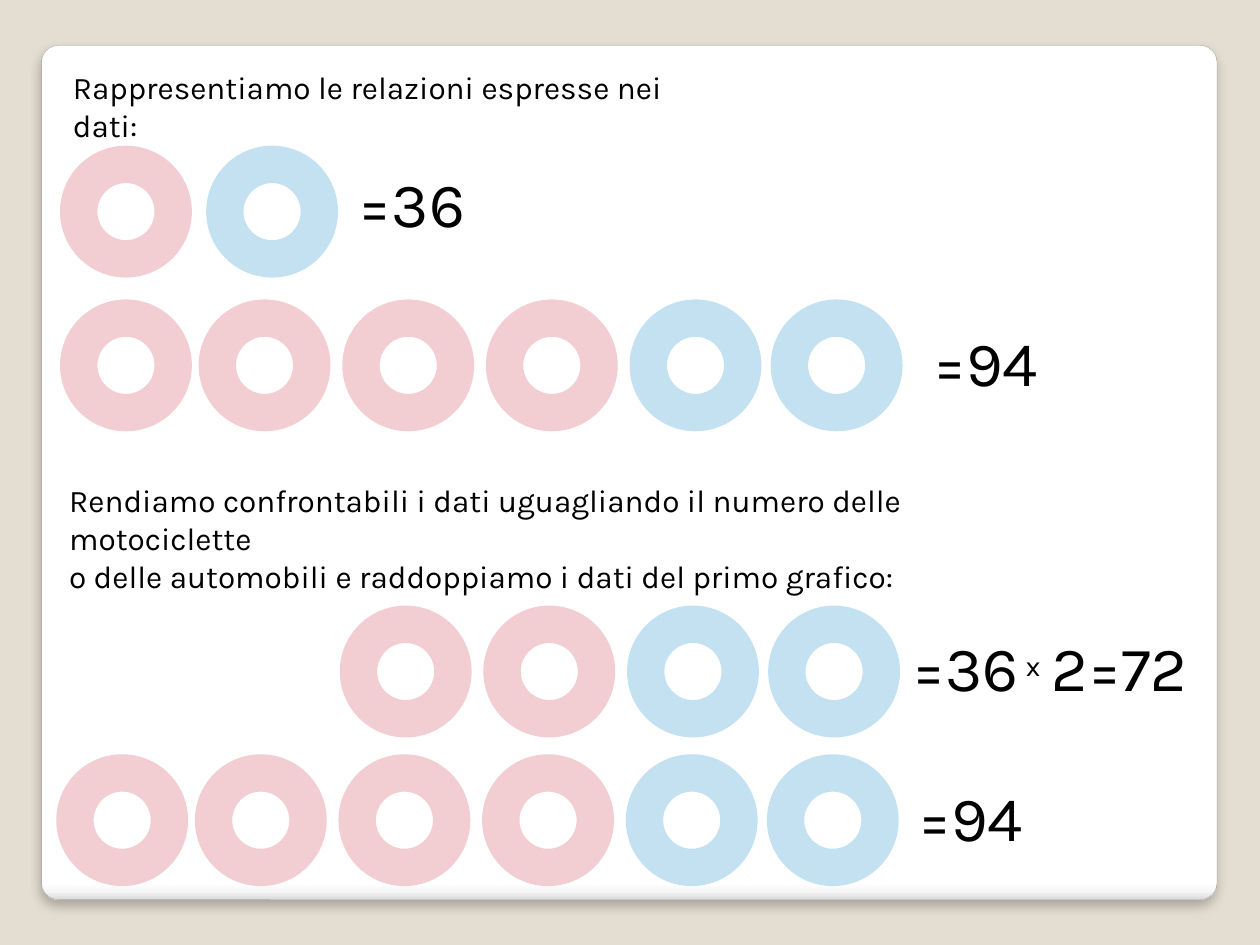
from lxml.etree import SubElement
from pptx import Presentation
from pptx.dml.color import RGBColor
from pptx.enum.shapes import MSO_SHAPE
from pptx.enum.text import MSO_ANCHOR, MSO_AUTO_SIZE
from pptx.oxml.ns import qn
from pptx.util import Inches, Pt

COLS, ROWS = 100, 75
WIDE, HIGH = Inches(10), Inches(7.5)
PINK, BLUE = "F2CED2", "C4E1F2"
RING = 10
STEPS = (0, 11, 22.4, 33.8, 45.2, 56.4)
CARS = (PINK,) * 4 + (BLUE,) * 2


def tint(color, code):
    color.rgb = RGBColor.from_string(code)


def place(left, top, width, height):
    return (int(WIDE * left / COLS), int(HIGH * top / ROWS),
            int(WIDE * width / COLS), int(HIGH * height / ROWS))


def add_card(slide, box):
    card = slide.shapes.add_shape(MSO_SHAPE.ROUNDED_RECTANGLE, *place(*box))
    card.adjustments[0] = 0.02
    card.shadow.inherit = False
    card.fill.gradient()
    card.fill.gradient_angle = 270
    tint(card.line.color, "A4A4A4")
    card.line.width = Pt(0.16)
    props = card.element.spPr
    stops = props.find(".//" + qn("a:gsLst"))
    stops.clear()
    for share, code in ((0, "FFFFFF"), (98, "FFFFFF"), (99, "F7F7F7"), (100, "DADADA")):
        stop = SubElement(stops, qn("a:gs"), pos=str(share * 1000))
        SubElement(stop, qn("a:srgbClr"), val=code)
    shade = SubElement(props.find(qn("a:effectLst")), qn("a:outerShdw"),
                       blurRad=str(Pt(6)), dist=str(Pt(4)), dir="5400000",
                       algn="t", rotWithShape="0")
    black = SubElement(shade, qn("a:srgbClr"), val="000000")
    SubElement(black, qn("a:alpha"), val="25000")


def add_rings(slide, left, top, steps, codes):
    for step, code in zip(steps, codes):
        ring = slide.shapes.add_shape(MSO_SHAPE.DONUT, *place(left + step, top, RING, RING))
        ring.shadow.inherit = False
        ring.fill.solid()
        tint(ring.fill.fore_color, code)
        tint(ring.line.color, code)
        ring.line.width = Pt(3.35)


def add_run(para, text, size):
    run = para.add_run()
    run.text = text
    run.font.name = "Karla"
    run.font.size = Pt(size)
    tint(run.font.color, "000000")
    return run


def add_text(slide, box, lines, size):
    frame = slide.shapes.add_textbox(*place(*box)).text_frame
    frame.word_wrap = True
    frame.auto_size = MSO_AUTO_SIZE.SHAPE_TO_FIT_TEXT
    for spot, line in enumerate(lines):
        para = frame.add_paragraph() if spot else frame.paragraphs[0]
        add_run(para, line, size)
    return frame


def add_double(slide, box):
    frame = add_text(slide, box, ["=36"], 36)
    frame.vertical_anchor = MSO_ANCHOR.MIDDLE
    para = frame.paragraphs[0]
    para.space_after = Pt(36)
    add_run(para, " ", 18)
    times = add_run(para, "x", 28).font._element
    times.set("baseline", "30000")
    times.set("spc", "640")
    add_run(para, "2=72", 36)


def add_given(slide, left, top):
    add_text(slide, (left, top, 53.1, 4),
             ["Rappresentiamo le relazioni espresse nei dati:"], 18)
    add_rings(slide, left + 0.2, top + 6.9, (0, 11.6), (PINK, BLUE))
    add_text(slide, (left + 22.7, top + 7.7, 11.5, 7.1), ["=36"], 36)
    add_rings(slide, left + 0.2, top + 19.1, STEPS, CARS)
    add_text(slide, (left + 68.3, top + 20.3, 11.5, 7.1), ["=94"], 36)


def add_match(slide, left, top):
    add_text(slide, (left, top, 79.8, 7.1),
             ["Rendiamo confrontabili i dati uguagliando il numero delle motociclette",
              "o delle automobili e raddoppiamo i dati del primo grafico:"], 18)
    add_rings(slide, left + 0.3, top + 10.6, STEPS[2:], CARS[2:])
    add_double(slide, (left + 66.9, top + 11.6, 26.3, 7.1))
    add_rings(slide, left + 0.2, top + 22.4, STEPS, CARS)
    add_text(slide, (left + 67.4, top + 23.6, 11.5, 7.1), ["=94"], 36)


def main():
    deck = Presentation()
    deck.slide_width, deck.slide_height = WIDE, HIGH
    slide = deck.slides.add_slide(deck.slide_layouts[6])
    slide.background.fill.solid()
    tint(slide.background.fill.fore_color, "E3DED1")
    add_card(slide, (3.3, 3.6, 93.3, 67.8))
    add_given(slide, 4.8, 4.9)
    add_match(slide, 4.5, 37.7)
    deck.save("out.pptx")


if __name__ == "__main__":
    main()
